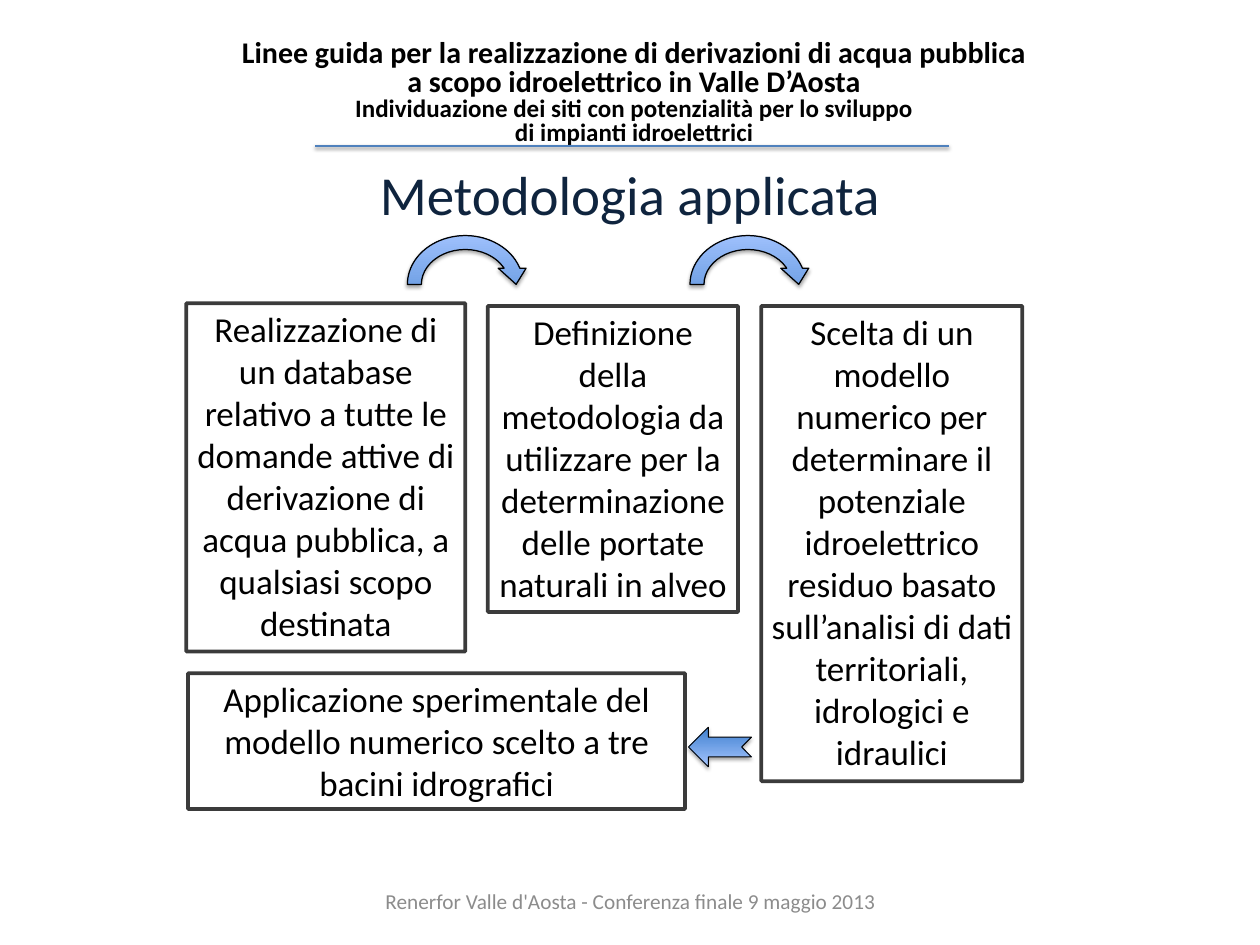
from dataclasses import dataclass

import lxml.etree
import pptx
import pptx.dml.color
import pptx.enum.shapes
import pptx.enum.text
import pptx.oxml.ns
import pptx.util
from pptx.util import Inches

ALIGN = pptx.enum.text.PP_ALIGN
ANCHOR = pptx.enum.text.MSO_ANCHOR
AUTO_SIZE = pptx.enum.text.MSO_AUTO_SIZE
SHAPE = pptx.enum.shapes.MSO_SHAPE


@dataclass(frozen=True)
class Theme:
    font: str = "Calibri"
    black: str = "000000"
    heading: str = "0F243E"
    footer: str = "8C8C8C"
    rule: str = "4F81BD"
    arrow_dark: str = "3F80CE"
    arrow_light: str = "A4C4FF"
    title_size: int = 24
    subtitle_size: int = 20
    heading_size: int = 44
    step_size: int = 28
    footer_size: int = 17


@dataclass(frozen=True)
class Frame:
    left: float
    top: float
    width: float
    height: float

    def lengths(self) -> tuple:
        return tuple(Inches(n) for n in (self.left, self.top, self.width, self.height))


@dataclass(frozen=True)
class Step:
    text: str
    frame: Frame


@dataclass(frozen=True)
class Arrow:
    preset: int
    frame: Frame
    line_width: float
    rotation: int = 0


THEME = Theme()

TITLE_LINES = [
    ("Linee guida per la realizzazione di derivazioni di acqua pubblica", THEME.title_size),
    ("a scopo idroelettrico in Valle D’Aosta", THEME.title_size),
    ("Individuazione dei siti con potenzialità per lo sviluppo", THEME.subtitle_size),
    ("di impianti idroelettrici", THEME.subtitle_size),
]

STEPS = [
    Step("Realizzazione di un database relativo a tutte le domande attive di derivazione "
         "di acqua pubblica, a qualsiasi scopo destinata", Frame(2.07, 3.37, 3.1, 3.87)),
    Step("Definizione della metodologia da utilizzare per la determinazione delle portate "
         "naturali in alveo", Frame(5.42, 3.4, 2.78, 3.4)),
    Step("Scelta di un modello numerico per determinare il potenziale idroelettrico residuo "
         "basato sull’analisi di dati territoriali, idrologici e idraulici",
         Frame(8.46, 3.4, 2.9, 5.28)),
    Step("Applicazione sperimentale del modello numerico scelto a tre bacini idrografici",
         Frame(2.09, 7.48, 5.52, 1.51)),
]

ARROWS = [
    Arrow(SHAPE.CIRCULAR_ARROW, Frame(4.45, 2.54, 1.44, 1.24), 1),
    Arrow(SHAPE.CIRCULAR_ARROW, Frame(7.59, 2.54, 1.44, 1.24), 1),
    Arrow(SHAPE.NOTCHED_RIGHT_ARROW, Frame(7.65, 8.08, 0.7, 0.44), 0.75, 180),
]


def rgb(value: str) -> pptx.dml.color.RGBColor:
    return pptx.dml.color.RGBColor.from_string(value)


def add_element(parent, name: str, **attributes):
    element = lxml.etree.SubElement(parent, pptx.oxml.ns.qn(name))
    for key, value in attributes.items():
        element.set(key, str(value))
    return element


def add_shadow(shape, distance: float, opacity: int) -> None:
    """Cast a soft black shadow straight down; call after the line is set."""
    effects = add_element(shape.element.spPr, "a:effectLst")
    outer = add_element(effects, "a:outerShdw", blurRad=pptx.util.Pt(3.1),
                        dist=pptx.util.Pt(distance), dir=90 * 60000, rotWithShape=0)
    color = add_element(outer, "a:srgbClr", val=THEME.black)
    add_element(color, "a:alpha", val=opacity * 1000)


def format_paragraph(paragraph, size: int, color: str) -> None:
    paragraph.alignment = ALIGN.CENTER
    paragraph.font.name = THEME.font
    paragraph.font.size = pptx.util.Pt(size)
    paragraph.font.color.rgb = rgb(color)


def set_wide_margins(text_frame) -> None:
    text_frame.word_wrap = True
    text_frame.auto_size = AUTO_SIZE.NONE
    text_frame.margin_left = text_frame.margin_right = Inches(0.14)
    text_frame.margin_top = text_frame.margin_bottom = Inches(0.07)


def fill_title(title) -> None:
    title.left, title.top, title.width, title.height = Frame(0.45, 0.33, 13.19, 1.42).lengths()
    set_wide_margins(title.text_frame)
    title.text_frame.vertical_anchor = ANCHOR.MIDDLE
    paragraph = title.text_frame.paragraphs[0]
    format_paragraph(paragraph, THEME.subtitle_size, THEME.black)
    paragraph.font.bold = True
    paragraph.line_spacing = 0.8
    for index, (text, size) in enumerate(TITLE_LINES):
        if index:
            paragraph.add_line_break()
        run = paragraph.add_run()
        run.text = text
        run.font.size = pptx.util.Pt(size)


def add_label(slide, text: str, frame: Frame, size: int, color: str):
    label = slide.shapes.add_textbox(*frame.lengths())
    set_wide_margins(label.text_frame)
    label.text_frame.text = text
    format_paragraph(label.text_frame.paragraphs[0], size, color)
    return label


def add_step(slide, step: Step) -> None:
    box = slide.shapes.add_shape(SHAPE.RECTANGLE, *step.frame.lengths())
    box.shadow.inherit = False
    box.fill.background()
    box.line.color.rgb = rgb(THEME.black)
    box.line.width = pptx.util.Pt(3)
    outline = box.line._get_or_add_ln()
    add_element(outline.find(".//" + pptx.oxml.ns.qn("a:srgbClr")), "a:alpha", val=77000)
    add_element(outline, "a:round")
    text_frame = box.text_frame
    text_frame.word_wrap = True
    text_frame.auto_size = AUTO_SIZE.SHAPE_TO_FIT_TEXT
    text_frame.vertical_anchor = ANCHOR.TOP
    text_frame.text = step.text
    format_paragraph(text_frame.paragraphs[0], THEME.step_size, THEME.black)


def add_arrow(slide, arrow: Arrow) -> None:
    shape = slide.shapes.add_shape(arrow.preset, *arrow.frame.lengths())
    shape.rotation = arrow.rotation
    shape.fill.gradient()
    shape.fill.gradient_angle = 90
    for stop, color, position in zip(shape.fill.gradient_stops,
                                     (THEME.arrow_dark, THEME.arrow_light), (0, 1)):
        stop.color.rgb = rgb(color)
        stop.position = position
    shape.line.color.rgb = rgb(THEME.black)
    shape.line.width = pptx.util.Pt(arrow.line_width)
    add_shadow(shape, distance=1.8, opacity=35)


def add_title_rule(slide) -> None:
    rule = slide.shapes.add_connector(pptx.enum.shapes.MSO_CONNECTOR.STRAIGHT, Inches(3.5),
                                      Inches(1.62), Inches(10.54), Inches(1.62))
    rule.line.color.rgb = rgb(THEME.rule)
    rule.line.width = pptx.util.Pt(2)
    add_shadow(rule, distance=1.6, opacity=38)


def main() -> None:
    presentation = pptx.Presentation()
    presentation.slide_width = Inches(14)
    presentation.slide_height = Inches(10.5)
    slide = presentation.slides.add_slide(presentation.slide_layouts.get_by_name("Title Only"))

    fill_title(slide.shapes.title)
    heading = add_label(slide, "Metodologia applicata", Frame(0.7, 1.8, 12.6, 0.94),
                        THEME.heading_size, THEME.heading)
    heading.text_frame.paragraphs[0].line_spacing = 0.9
    footer = add_label(slide, "Renerfor Valle d'Aosta - Conferenza finale 9 maggio 2013",
                       Frame(0.85, 9.73, 12.31, 0.56), THEME.footer_size, THEME.footer)
    footer.text_frame.vertical_anchor = ANCHOR.MIDDLE

    for step in STEPS:
        add_step(slide, step)
    add_title_rule(slide)
    for arrow in ARROWS:
        add_arrow(slide, arrow)

    presentation.save("out.pptx")


if __name__ == "__main__":
    main()
